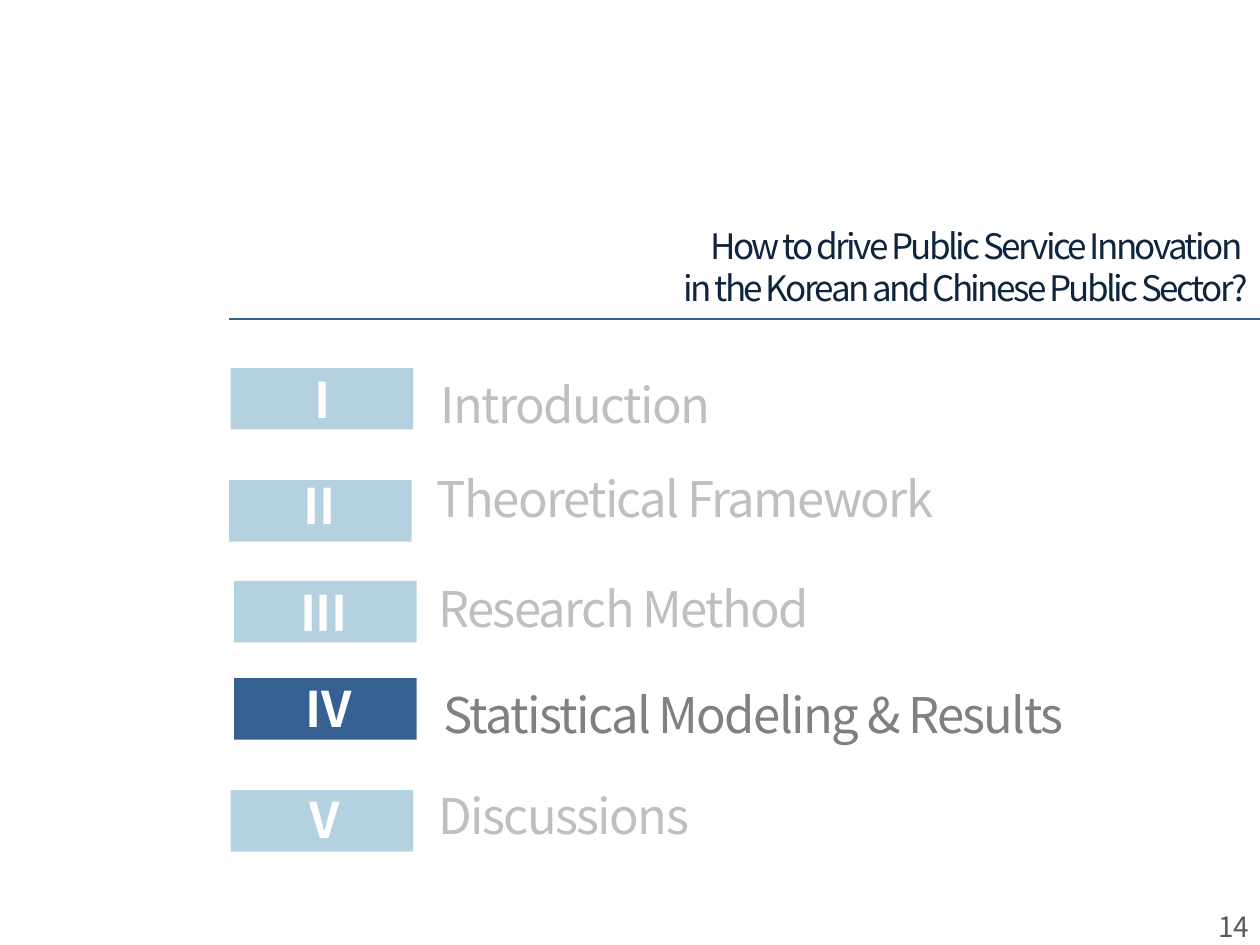
from dataclasses import dataclass

from lxml.etree import SubElement
from pptx import Presentation
from pptx.dml.color import RGBColor as RGB
from pptx.enum.shapes import MSO_CONNECTOR as CONN, MSO_SHAPE as SHAPE
from pptx.enum.text import MSO_ANCHOR as ANCHOR, MSO_AUTO_SIZE as AUTO, PP_ALIGN as ALIGN
from pptx.oxml.ns import qn
from pptx.util import Cm, Pt


@dataclass(frozen=True)
class Theme:
    font: str = "Noto Sans CJK KR"
    title: str = "0F243E"
    accent: str = "376092"
    badge: str = "B3D1DF"
    numeral: str = "FFFFFF"
    label: str = "BFBFBF"
    current: str = "808080"
    page: str = "595959"
    title_size: int = 20
    item_size: int = 28
    page_size: int = 16


T = Theme()


def write(sp, text, *, size, color, align=ALIGN.LEFT, bold=False, spacing=0, wrap=True):
    """Fill a shape with one paragraph per line; spacing is between letters, in points."""
    tf = sp.text_frame
    tf.text = text
    tf.word_wrap = wrap
    tf.auto_size = AUTO.NONE
    tf.vertical_anchor = ANCHOR.TOP
    for p in tf.paragraphs:
        p.alignment = align
        p.line_spacing = Pt(size * 1.2)
        p.space_before = Pt(0)
        for r in p.runs:
            r.font.name = T.font
            r.font.size = Pt(size)
            r.font.bold = bold
            r.font.color.rgb = RGB.from_string(color)
            r.font._element.set("spc", str(round(spacing * 100)))


prs = Presentation()
prs.slide_width, prs.slide_height = Cm(25.4), Cm(19.05)
s = prs.slides.add_slide(prs.slide_layouts[5])  # Title Only

# Heading and rule
title = s.shapes.title
title.left, title.top, title.width, title.height = Cm(3.91), Cm(4.39), Cm(21.49), Cm(1.96)
write(title, "How to drive Public Service Innovation \nin the Korean and Chinese Public Sector?",
      size=T.title_size, color=T.title, align=ALIGN.RIGHT, spacing=-1.5)

rule = s.shapes.add_connector(CONN.STRAIGHT, Cm(4.62), Cm(6.43), Cm(25.4), Cm(6.43))
rule.line.color.rgb = RGB.from_string(T.accent)
rule.line.width = Pt(1.5)
SubElement(rule._element.spPr, qn("a:effectLst"))

# Agenda: numeral, label, then left and top of badge, numeral and label, in cm
current = "IV"
agenda = [
    ("I", "Introduction", (4.65, 7.42), (4.45, 7.32), (8.64, 7.42)),
    ("II", "Theoretical Framework", (4.62, 9.68), (4.39, 9.47), (8.56, 9.32)),
    ("III", "Research Method", (4.72, 11.71), (4.47, 11.61), (8.59, 11.53)),
    ("IV", "Statistical Modeling & Results", (4.72, 13.67), (4.57, 13.56), (8.69, 13.67)),
    ("V", "Discussions", (4.65, 15.93), (4.5, 15.8), (8.59, 15.72)),
]
for numeral, label, badge_at, numeral_at, label_at in agenda:
    active = numeral == current

    badge = s.shapes.add_shape(SHAPE.RECTANGLE, *map(Cm, badge_at), Cm(3.68), Cm(1.24))
    badge.shadow.inherit = False
    badge.fill.solid()
    badge.fill.fore_color.rgb = RGB.from_string(T.accent if active else T.badge)
    badge.line.fill.background()

    sp = s.shapes.add_textbox(*map(Cm, numeral_at), Cm(4.11), Cm(1.45))
    write(sp, numeral, size=T.item_size, color=T.numeral, align=ALIGN.CENTER,
          bold=True, spacing=-0.4)

    sp = s.shapes.add_textbox(*map(Cm, label_at), Cm(16.3), Cm(1.45))
    write(sp, label, size=T.item_size, color=T.current if active else T.label, spacing=-0.9)

# Page number
page = s.shapes.add_textbox(Cm(24.26), Cm(18.21), Cm(1.17), Cm(0.94))
write(page, "14", size=T.page_size, color=T.page, align=ALIGN.RIGHT, wrap=False)

prs.save("out.pptx")
